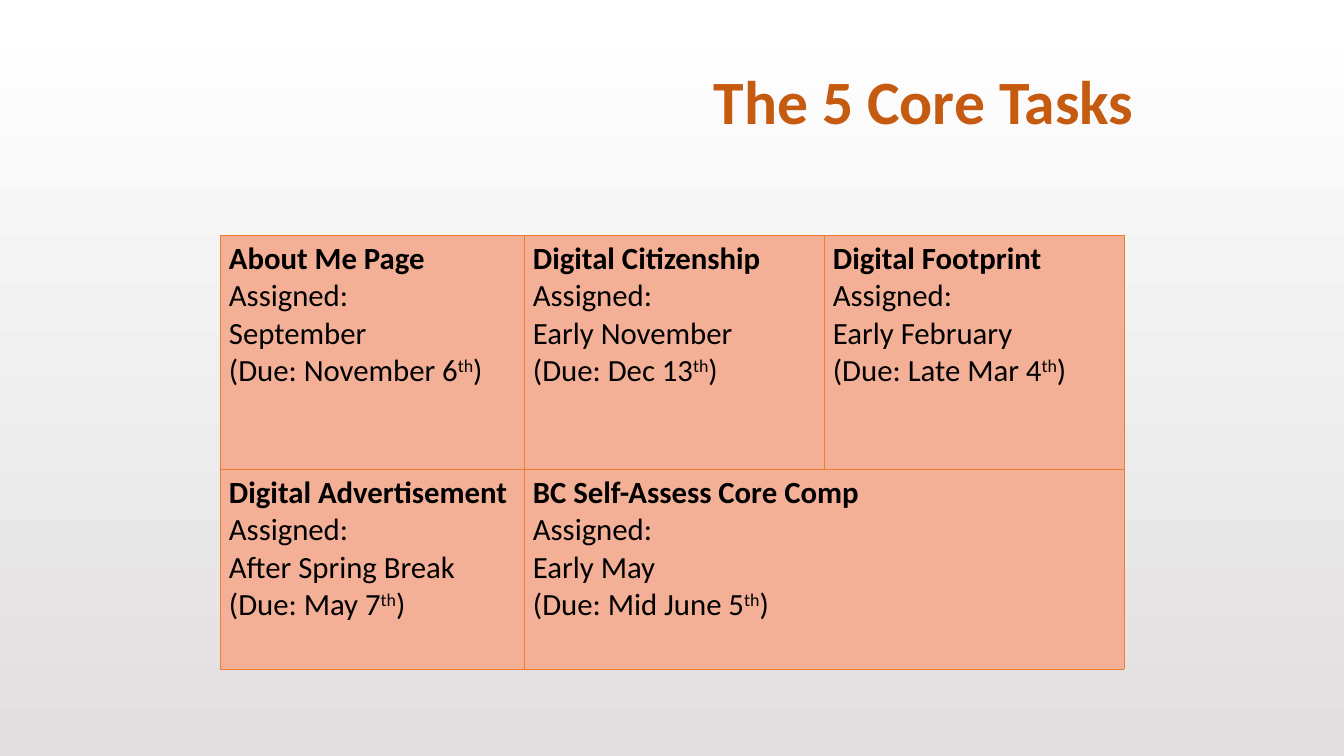
from lxml.etree import SubElement
from pptx import Presentation
from pptx.dml.color import RGBColor
from pptx.enum.text import MSO_ANCHOR, PP_ALIGN
from pptx.oxml.ns import qn
from pptx.util import Emu, Pt

FONT = "Calibri"
TITLE_COLOR = "C55A11"
TEXT_COLOR = "000000"
CELL_COLOR = "F4B096"
BORDER_COLOR = "ED7D31"
COLUMN_WIDTHS = (304, 300, 300)
ROW_HEIGHTS = (234, 200)
TASKS = (
    (
        ("About Me Page", "September", "November 6"),
        ("Digital Citizenship", "Early November", "Dec 13"),
        ("Digital Footprint", "Early February", "Late Mar 4"),
    ),
    (
        ("Digital Advertisement", "After Spring Break", "May 7"),
        ("BC Self-Assess Core Comp", "Early May", "Mid June 5"),
    ),
)


def px(count):
    return Emu(round(count * 914400 / 100.8))


def color(value):
    return RGBColor.from_string(value)


def style_font(font, size, value, bold):
    font.name = FONT
    font.size = Pt(size)
    font.bold = bold
    font.color.rgb = color(value)


def paint_background(slide):
    fill = slide.background.fill
    fill.gradient()
    fill.gradient_angle = 270
    for stop, value in zip(fill.gradient_stops, ("FFFFFF", "E1DFDF")):
        stop.color.rgb = color(value)


def add_title(slide, text):
    frame = slide.shapes.add_textbox(px(276), px(69), px(868), px(141)).text_frame
    frame.word_wrap = True
    frame.vertical_anchor = MSO_ANCHOR.TOP
    frame.margin_top = px(2)
    paragraph = frame.paragraphs[0]
    paragraph.text = text
    paragraph.alignment = PP_ALIGN.RIGHT
    paragraph.line_spacing = 0.9
    style_font(paragraph.font, 44, TITLE_COLOR, True)


def style_cell(cell):
    cell.margin_left = cell.margin_right = px(9)
    cell.margin_top = cell.margin_bottom = px(5)
    properties = cell._tc.get_or_add_tcPr()
    for side in ("a:lnL", "a:lnR", "a:lnT", "a:lnB"):
        line = SubElement(properties, qn(side), w=str(Pt(0.5)))
        fill = SubElement(line, qn("a:solidFill"))
        SubElement(fill, qn("a:srgbClr"), val=BORDER_COLOR)
    cell.fill.solid()
    cell.fill.fore_color.rgb = color(CELL_COLOR)


def write_task(cell, name, assigned, due):
    frame = cell.text_frame
    frame.text = "\n".join((name, "Assigned:", assigned, f"(Due: {due}"))
    for index, paragraph in enumerate(frame.paragraphs):
        style_font(paragraph.font, 22, TEXT_COLOR, index == 0)
    due_line = frame.paragraphs[-1]
    suffix = due_line.add_run()
    suffix.text = "th"
    suffix.font._element.set("baseline", "30000")
    due_line.add_run().text = ")"


def add_task_table(slide):
    frame = slide.shapes.add_table(
        len(ROW_HEIGHTS), len(COLUMN_WIDTHS), px(220), px(235),
        px(sum(COLUMN_WIDTHS)), px(sum(ROW_HEIGHTS)),
    )
    table = frame.table
    table.first_row = table.horz_banding = False
    for column, width in zip(table.columns, COLUMN_WIDTHS):
        column.width = px(width)
    for row, height in zip(table.rows, ROW_HEIGHTS):
        row.height = px(height)
    for cell in table.iter_cells():
        style_cell(cell)
    table.cell(1, 1).merge(table.cell(1, 2))
    for row, tasks in enumerate(TASKS):
        for column, task in enumerate(tasks):
            write_task(table.cell(row, column), *task)


def main():
    presentation = Presentation()
    presentation.slide_width = px(1344)
    presentation.slide_height = px(756)
    slide = presentation.slides.add_slide(presentation.slide_layouts[6])
    paint_background(slide)
    add_title(slide, "The 5 Core Tasks")
    add_task_table(slide)
    presentation.save("out.pptx")


if __name__ == "__main__":
    main()
